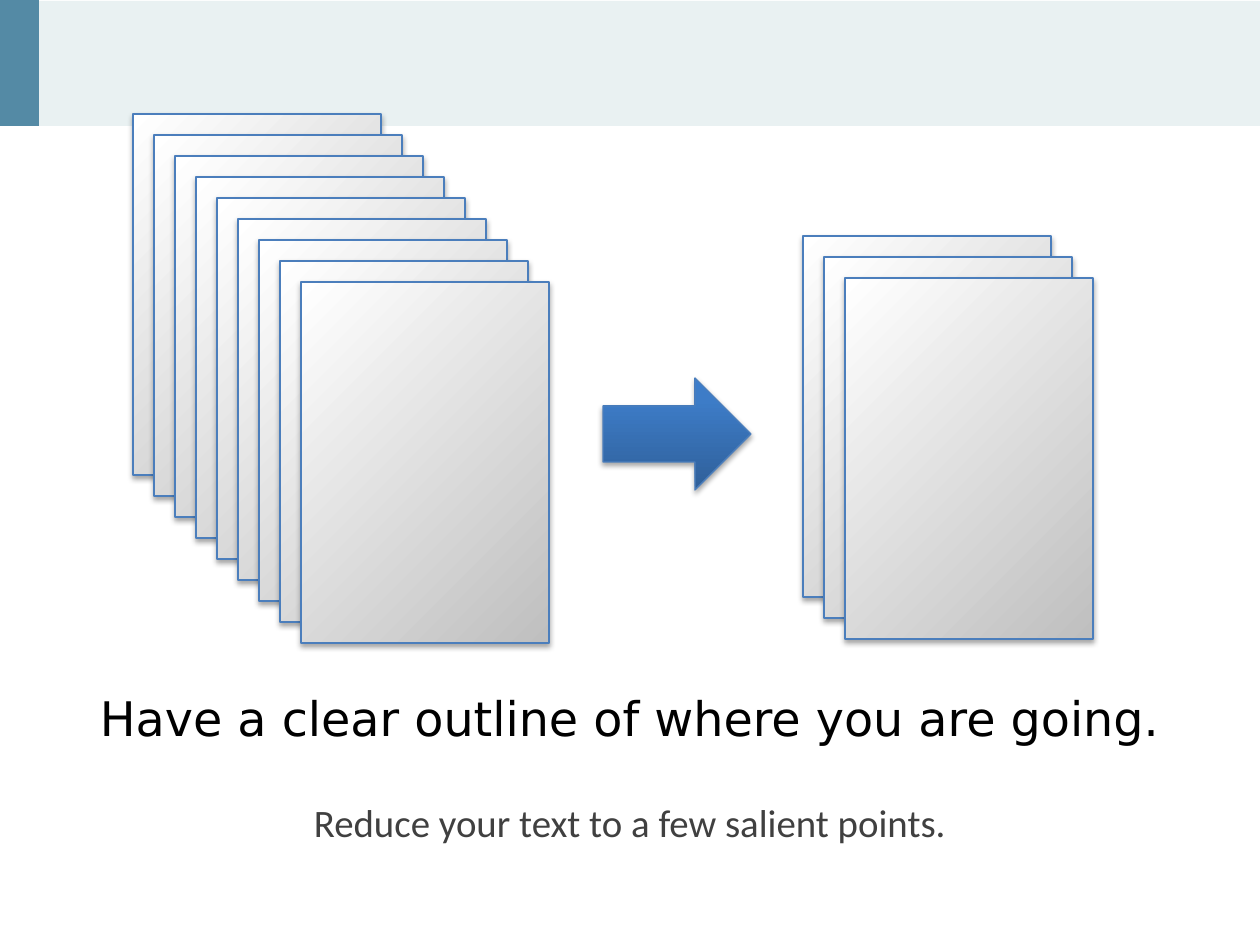
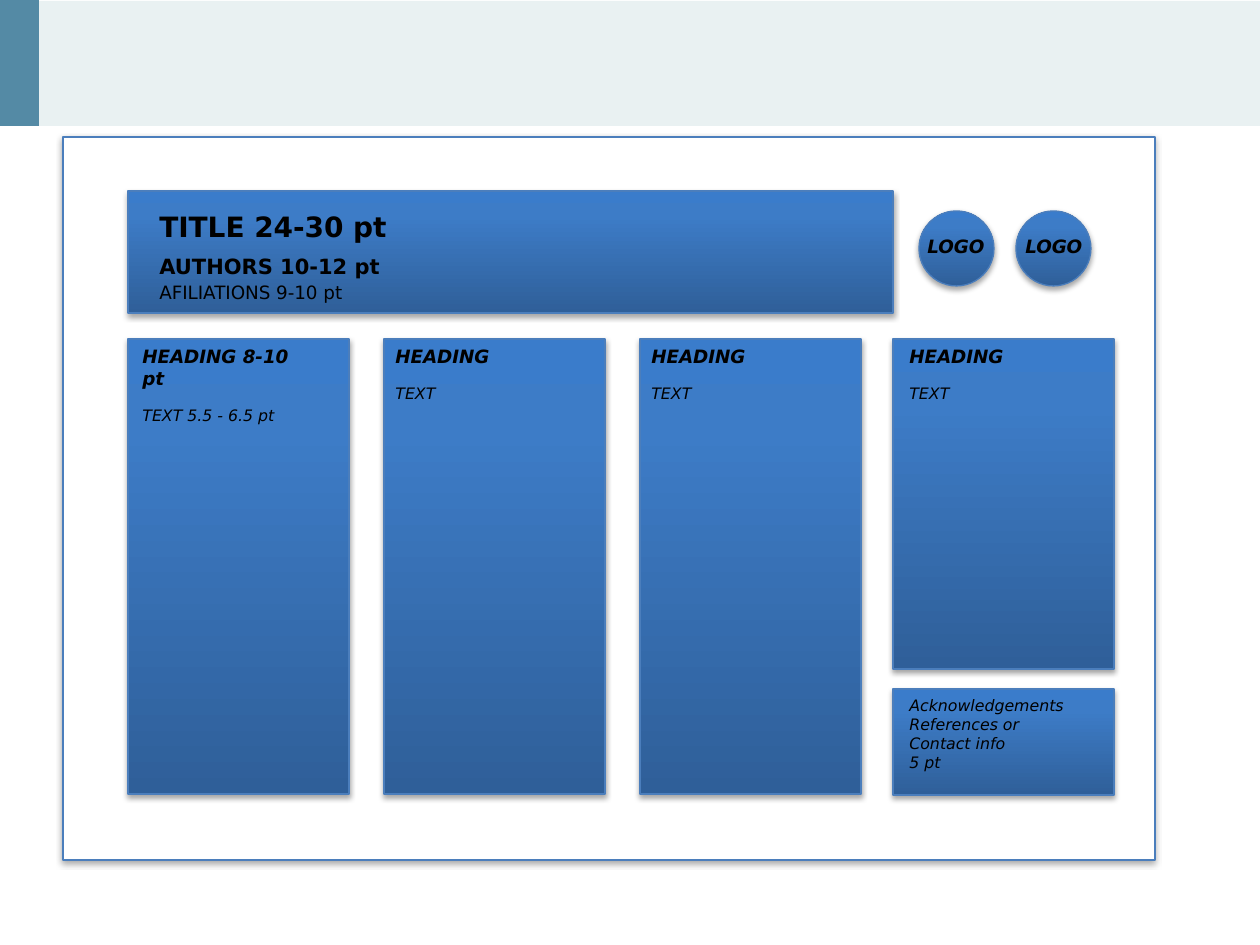
"""Build two slides on condensing a text and laying out a poster."""
from dataclasses import dataclass

from pptx import Presentation
from pptx.dml.color import RGBColor
from pptx.enum.shapes import MSO_SHAPE
from pptx.enum.text import PP_ALIGN
from pptx.oxml import parse_xml
from pptx.oxml.ns import nsdecls, qn
from pptx.util import Inches, Pt

PX = 7257


@dataclass(frozen=True)
class Theme:
    band: str = "E9F1F2"
    accent: str = "548AA5"
    outline: str = "4B7EBC"
    paper: str = "FFFFFF"
    ink: str = "000000"
    soft_ink: str = "404040"
    blue_stops: tuple = ((0, "2F5F99"), (80, "3D7CC7"), (100, "3A7CCB"))
    blue_run: str = '<a:lin ang="16200000" scaled="0"/>'
    grey_stops: tuple = ((0, "BFBFBF"), (100, "FFFFFF"))
    grey_run: str = '<a:path path="circle"><a:fillToRect l="100000" t="100000"/></a:path>'
    font: str = "DejaVu Sans"
    note_font: str = "Calibri"
    statement: float = 27.2
    note: float = 22.2
    title: float = 16
    authors: float = 12
    heading: float = 10.5
    body: float = 9
    heading_gap: float = 9.5


THEME = Theme()
BLUE = (THEME.blue_stops, THEME.blue_run)
GREY = (THEME.grey_stops, THEME.grey_run)


def draw(slide, kind, box, fill, raised=True):
    """Draw a shape with a solid or gradient fill, raised by a line and a shadow."""
    shape = slide.shapes.add_shape(kind, *(side * PX for side in box))
    shape.shadow.inherit = False
    properties = shape.element.spPr
    if isinstance(fill, str):
        shape.fill.solid()
        shape.fill.fore_color.rgb = RGBColor.from_string(fill)
    else:
        stops, run = fill
        stop_xml = "".join(
            f'<a:gs pos="{position * 1000}"><a:srgbClr val="{color}"/></a:gs>'
            for position, color in stops)
        shape.fill.gradient()
        properties.replace(properties.find(qn("a:gradFill")), parse_xml(
            f'<a:gradFill {nsdecls("a")} rotWithShape="1">'
            f"<a:gsLst>{stop_xml}</a:gsLst>{run}</a:gradFill>"))
    if not raised:
        shape.line.fill.background()
        return
    shape.line.color.rgb = RGBColor.from_string(THEME.outline)
    shape.line.width = Pt(0.75)
    properties.find(qn("a:effectLst")).append(parse_xml(
        f'<a:outerShdw {nsdecls("a")} blurRad="40000" dist="23000" dir="5400000" rotWithShape="0">'
        f'<a:srgbClr val="{THEME.ink}"><a:alpha val="35000"/></a:srgbClr></a:outerShdw>'))


def write(slide, box, *lines, inset=None, **shared):
    """Write lines of (text, own format) in a box with a shared format."""
    frame = slide.shapes.add_textbox(*(side * PX for side in box)).text_frame
    frame.word_wrap = True
    if inset:
        frame.margin_left = frame.margin_right = inset * PX
        frame.margin_top = frame.margin_bottom = inset * PX
    for index, (text, own) in enumerate(lines):
        style = {**shared, **own}
        paragraph = frame.add_paragraph() if index else frame.paragraphs[0]
        paragraph.text = text
        paragraph.alignment = style.get("align", PP_ALIGN.LEFT)
        if "before" in style:
            paragraph.space_before = Pt(style["before"])
        font = paragraph.font
        font.name = style.get("font", THEME.font)
        font.size = Pt(style["size"])
        font.bold = style.get("bold", False)
        font.italic = style.get("italic", False)
        font.color.rgb = RGBColor.from_string(style.get("color", THEME.ink))


deck = Presentation()
deck.slide_width, deck.slide_height = Inches(10), Inches(7.5)
outline_slide, poster_slide = (deck.slides.add_slide(deck.slide_layouts[6]) for _ in range(2))
for slide in (outline_slide, poster_slide):
    draw(slide, MSO_SHAPE.RECTANGLE, (0, 1, 1260, 125), THEME.band, raised=False)
    draw(slide, MSO_SHAPE.RECTANGLE, (0, 0, 39, 126), THEME.accent, raised=False)

draw(outline_slide, MSO_SHAPE.RIGHT_ARROW, (603, 378, 148, 112), BLUE)
for stack_left, stack_top, sheet_count in ((133, 114, 9), (803, 236, 3)):
    for sheet in range(sheet_count):
        offset = 21 * sheet
        draw(outline_slide, MSO_SHAPE.RECTANGLE,
             (stack_left + offset, stack_top + offset, 248, 361), GREY)
write(outline_slide, (63, 775, 1134, 118), ("Reduce your text to a few salient points.", {}),
      inset=38, size=THEME.note, font=THEME.note_font, color=THEME.soft_ink,
      align=PP_ALIGN.CENTER)
write(outline_slide, (63, 683, 1134, 93), ("Have a clear outline of where you are going.", {}),
      size=THEME.statement, align=PP_ALIGN.CENTER)

draw(poster_slide, MSO_SHAPE.RECTANGLE, (63, 137, 1092, 723), THEME.paper)
draw(poster_slide, MSO_SHAPE.RECTANGLE, (128, 191, 765, 122), BLUE)
for text, top, height, size, bold in (
        ("TITLE 24-30 pt", 203, 47, THEME.title, True),
        ("AUTHORS 10-12 pt", 247, 38, THEME.authors, True),
        ("AFILIATIONS 9-10 pt", 275, 35, THEME.heading, False)):
    write(poster_slide, (147, top, 583, height), (text, {}), size=size, bold=bold)

for badge_left, label_left in ((919, 915), (1016, 1013)):
    draw(poster_slide, MSO_SHAPE.OVAL, (badge_left, 211, 75, 75), BLUE)
    write(poster_slide, (label_left, 229, 91, 35), ("LOGO", {}),
          size=THEME.heading, bold=True, italic=True)

for column_left, label_left, height, heading, body in (
        (128, 130, 455, "HEADING 8-10 pt", "TEXT 5.5 - 6.5 pt"),
        (384, 383, 455, "HEADING", "TEXT"),
        (640, 639, 455, "HEADING", "TEXT"),
        (893, 897, 330, "HEADING", "TEXT")):
    draw(poster_slide, MSO_SHAPE.RECTANGLE, (column_left, 339, 221, height), BLUE)
    write(poster_slide, (label_left, 339, 184, 72),
          (heading, {"size": THEME.heading, "bold": True}),
          (body, {"size": THEME.body, "before": THEME.heading_gap}), italic=True)

draw(poster_slide, MSO_SHAPE.RECTANGLE, (893, 689, 221, 106), BLUE)
write(poster_slide, (897, 690, 184, 90),
      *((line, {}) for line in ("Acknowledgements", "References or", "Contact info", "5 pt")),
      size=THEME.body, italic=True)

deck.save("out.pptx")
